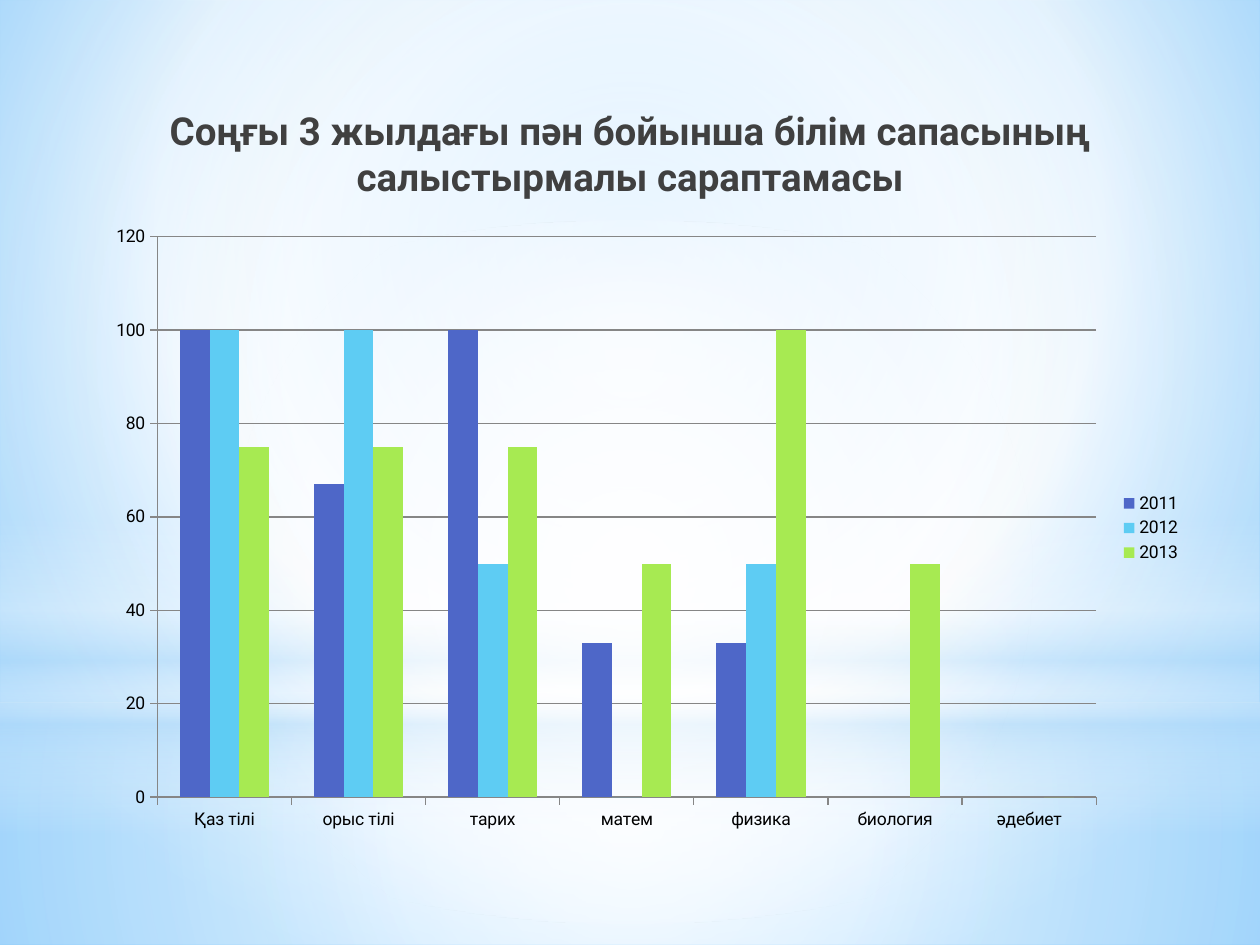
import dataclasses

import lxml.etree
import pptx
import pptx.chart.data
import pptx.dml.color
import pptx.enum.chart
import pptx.enum.shapes
import pptx.enum.text
import pptx.oxml.ns
import pptx.util

Cm, Pt = pptx.util.Cm, pptx.util.Pt
qn = pptx.oxml.ns.qn
FONT = "Roboto"
WIDTH, HEIGHT = 25.4, 19.05
CENTRE = (50, 50, 50, 50)


@dataclasses.dataclass
class Gradient:
    stops: list[tuple[int, str, int]]  # position, colour, opacity (percent)
    focus: tuple[int, int, int, int] | None = None  # None means top to bottom


@dataclasses.dataclass
class Glow:
    top: float
    height: float
    gradient: Gradient
    kind: int = pptx.enum.shapes.MSO_SHAPE.RECTANGLE


@dataclasses.dataclass
class Year:
    name: str
    values: list[int | None]
    colour: str


BACKDROP = Gradient(
    [(0, "9ED5FF", 100), (60, "FFFFFF", 100), (100, "5BB9FF", 100)], (20, 10, 20, 60))
GLOWS = [
    Glow(14.17, 4.88, Gradient(
        [(0, "FFFFFF", 91), (37, "FFFFFF", 76), (100, "B4DCFA", 79)], CENTRE)),
    Glow(0, 14.17, Gradient(
        [(0, "FFFFFF", 89), (48, "FFFFFF", 62), (100, "B4DCFA", 79)], CENTRE)),
    Glow(10.46, 6.35, Gradient(
        [(0, "FFFFFF", 0), (29, "FFFFFF", 30), (45, "B4DCFA", 40),
         (55, "FFFFFF", 26), (65, "B4DCFA", 60), (100, "FFFFFF", 0)])),
    Glow(4.45, 14.17, Gradient([(0, "FFFFFF", 100), (56, "FFFFFF", 0)], CENTRE),
         pptx.enum.shapes.MSO_SHAPE.OVAL),
]
SUBJECTS = ["Қаз тілі", "орыс тілі", "тарих", "матем", "физика", "биология", "әдебиет"]
YEARS = [
    Year("2011", [100, 67, 100, 33, 33, None, None], "4E67C8"),
    Year("2012", [100, 100, 50, 0, 50, None, None], "5ECCF3"),
    Year("2013", [75, 75, 75, 50, 100, 50, 0], "A7EA52"),
]


def colour(value: str) -> pptx.dml.color.RGBColor:
    return pptx.dml.color.RGBColor.from_string(value)


def apply(target, values: dict) -> None:
    for name, value in values.items():
        setattr(target, name, value)


def set_gradient(fill, parent, gradient: Gradient) -> None:
    """Swap a solid fill inside parent for a gradient with opacity."""
    fill.solid()
    element = lxml.etree.Element(qn("a:gradFill"), rotWithShape="1")
    stops = lxml.etree.SubElement(element, qn("a:gsLst"))
    for position, value, opacity in gradient.stops:
        stop = lxml.etree.SubElement(stops, qn("a:gs"), pos=str(position * 1000))
        tint = lxml.etree.SubElement(stop, qn("a:srgbClr"), val=value)
        if opacity < 100:
            lxml.etree.SubElement(tint, qn("a:alpha"), val=str(opacity * 1000))
    if gradient.focus is None:
        lxml.etree.SubElement(element, qn("a:lin"), ang="5400000", scaled="0")
    else:
        circle = lxml.etree.SubElement(element, qn("a:path"), {"path": "circle"})
        sides = {side: str(part * 1000) for side, part in zip("ltrb", gradient.focus)}
        lxml.etree.SubElement(circle, qn("a:fillToRect"), sides)
    parent.replace(parent.find(qn("a:solidFill")), element)


def draw_background(slide) -> None:
    fill = slide.background.fill
    fill.solid()
    set_gradient(fill, slide.element.find(".//" + qn("p:bgPr")), BACKDROP)
    for glow in GLOWS:
        shape = slide.shapes.add_shape(
            glow.kind, 0, Cm(glow.top), Cm(WIDTH), Cm(glow.height))
        shape.shadow.inherit = False
        shape.line.fill.background()
        set_gradient(shape.fill, shape.element.spPr, glow.gradient)


def draw_title(slide, text: str) -> None:
    title = slide.shapes.title
    slide.shapes.element.append(title.element)  # bring in front of the glows
    apply(title, {"left": Cm(1.5), "top": Cm(2.03), "width": Cm(22.4), "height": Cm(3.3)})
    frame = title.text_frame
    frame.text = text
    apply(frame, {"word_wrap": True, "vertical_anchor": pptx.enum.text.MSO_ANCHOR.TOP,
                  "auto_size": pptx.enum.text.MSO_AUTO_SIZE.NONE})
    paragraph = frame.paragraphs[0]
    apply(paragraph, {"alignment": pptx.enum.text.PP_ALIGN.CENTER,
                      "space_before": Pt(4), "space_after": Pt(3)})
    font = paragraph.runs[0].font
    apply(font, {"name": FONT, "size": Pt(22), "bold": True})
    font.color.rgb = colour("404040")


def draw_chart(slide) -> None:
    data = pptx.chart.data.CategoryChartData()
    data.categories = SUBJECTS
    for year in YEARS:
        data.add_series(year.name, year.values)
    chart = slide.shapes.add_chart(
        pptx.enum.chart.XL_CHART_TYPE.COLUMN_CLUSTERED,
        Cm(1.9), Cm(4.32), Cm(22.17), Cm(12.65), data).chart
    apply(chart, {"has_title": False, "has_legend": True})
    apply(chart.font, {"name": FONT, "size": Pt(10)})
    chart.font.color.rgb = colour("000000")
    apply(chart.legend, {"position": pptx.enum.chart.XL_LEGEND_POSITION.RIGHT,
                         "include_in_layout": False})

    # Columns
    plot = chart.plots[0]
    apply(plot, {"gap_width": 150, "overlap": 0, "vary_by_categories": False})
    for series, year in zip(plot.series, YEARS):
        series.format.fill.solid()
        series.format.fill.fore_color.rgb = colour(year.colour)

    # Axes and gridlines
    value_axis = chart.value_axis
    apply(value_axis, {"minimum_scale": 0, "maximum_scale": 120, "major_unit": 20,
                       "has_major_gridlines": True})
    for axis in (value_axis, chart.category_axis):
        axis.major_tick_mark = pptx.enum.chart.XL_TICK_MARK.OUTSIDE
    for part in (value_axis, chart.category_axis, value_axis.major_gridlines):
        part.format.line.color.rgb = colour("868686")
        part.format.line.width = Pt(0.75)


def main() -> None:
    presentation = pptx.Presentation()
    apply(presentation, {"slide_width": Cm(WIDTH), "slide_height": Cm(HEIGHT)})
    slide = presentation.slides.add_slide(presentation.slide_layouts[5])
    draw_background(slide)
    draw_title(slide, "Соңғы 3 жылдағы пән бойынша білім сапасының салыстырмалы сараптамасы")
    draw_chart(slide)
    presentation.save("out.pptx")


if __name__ == "__main__":
    main()
